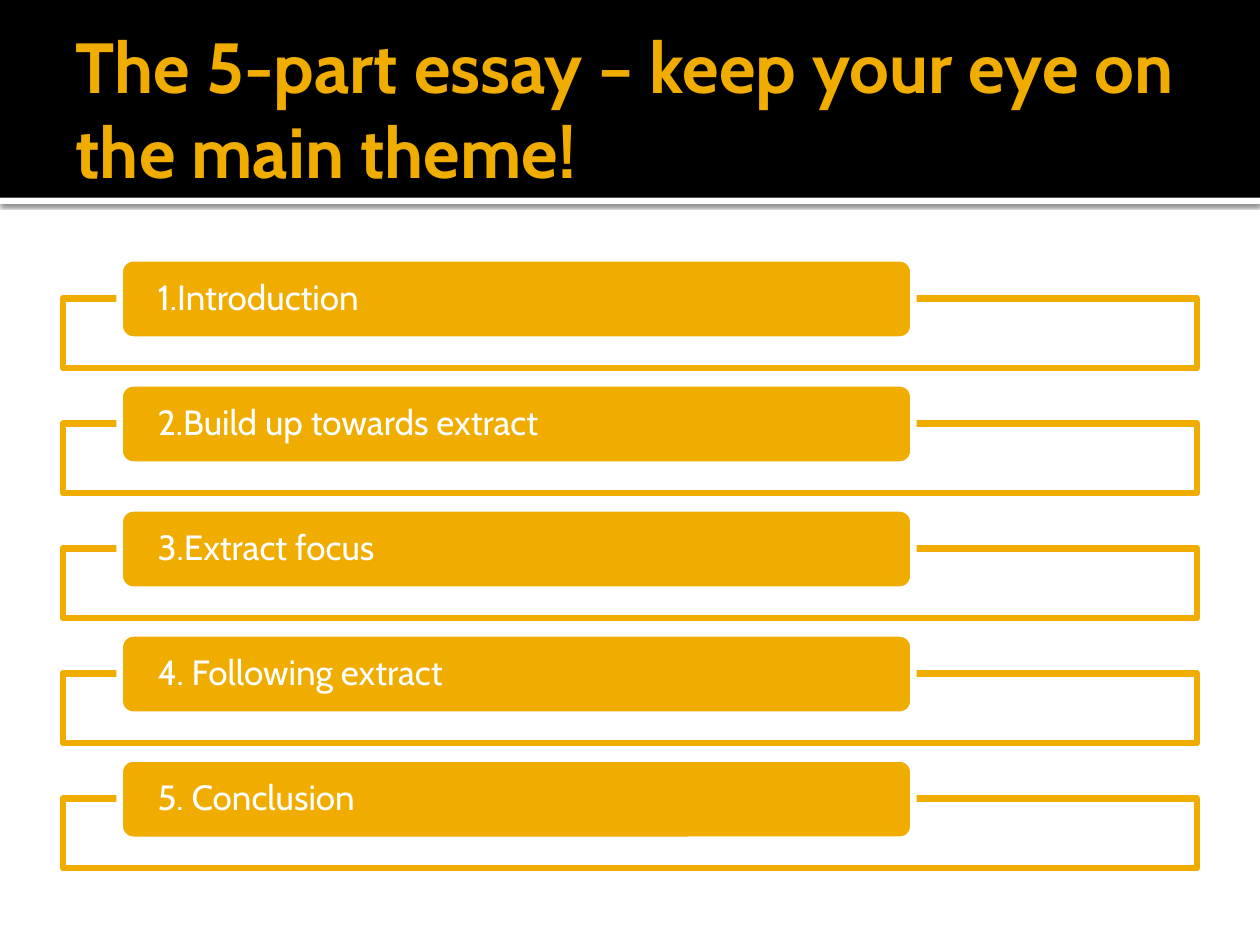
from dataclasses import dataclass

from lxml import etree
from pptx import Presentation
from pptx.dml.color import RGBColor
from pptx.enum import shapes, text
from pptx.oxml import ns
from pptx.util import Pt

BLACK = RGBColor(0x00, 0x00, 0x00)
WHITE = RGBColor(0xFF, 0xFF, 0xFF)
GOLD = RGBColor(0xF0, 0xAD, 0x00)
FONT = "Cabin"
LINE_WIDTH = 3.78


@dataclass(frozen=True)
class Box:
    left: float
    top: float
    width: float
    height: float

    def lengths(self):
        return Pt(self.left), Pt(self.top), Pt(self.width), Pt(self.height)


SECTIONS = [
    "1.Introduction",
    "2.Build up towards extract",
    "3.Extract focus",
    "4. Following extract",
    "5. Conclusion",
]
FIRST_TOP = 147.6
PITCH = 71.46
FRAME_DROP = 22.9


def add_box(slide, kind, box: Box, fill: RGBColor, line: RGBColor | None = None):
    sp = slide.shapes.add_shape(kind, *box.lengths())
    sp.shadow.inherit = False
    sp.fill.solid()
    sp.fill.fore_color.rgb = fill
    if line is None:
        sp.line.fill.background()
    else:
        sp.line.color.rgb = line
        sp.line.width = Pt(LINE_WIDTH)
    return sp


def set_alpha(parent, percent: int) -> None:
    color = parent.find(".//" + ns.qn("a:srgbClr"))
    etree.SubElement(color, ns.qn("a:alpha"), val=str(percent * 1000))


def add_drop_shadow(sp) -> None:
    effects = sp._element.spPr.find(ns.qn("a:effectLst"))
    shadow = etree.SubElement(
        effects, ns.qn("a:outerShdw"), blurRad=str(Pt(2.5)), dist=str(Pt(0.8)),
        dir="5400000", algn="tl", rotWithShape="0")
    etree.SubElement(shadow, ns.qn("a:srgbClr"), val=str(BLACK))
    set_alpha(shadow, 60)


def add_section(slide, top: float, label: str) -> None:
    frame = add_box(slide, shapes.MSO_SHAPE.RECTANGLE,
                    Box(36, top + FRAME_DROP, 648, 39.7), WHITE, GOLD)
    set_alpha(frame._element.spPr.find(ns.qn("a:solidFill")), 90)

    tab = add_box(slide, shapes.MSO_SHAPE.ROUNDED_RECTANGLE,
                  Box(68.4, top, 453.6, 46.5), GOLD, WHITE)
    tf = tab.text_frame
    tf.word_wrap = True
    tf.vertical_anchor = text.MSO_ANCHOR.MIDDLE
    tf.margin_left = tf.margin_right = Pt(19.4)
    tf.margin_top = tf.margin_bottom = 0
    p = tf.paragraphs[0]
    p.text = label
    p.alignment = text.PP_ALIGN.LEFT
    p.line_spacing = 0.9
    p.font.name, p.font.size = FONT, Pt(20)
    p.font.color.rgb = WHITE


def add_title(slide, wording: str) -> None:
    title = slide.shapes.title
    title.left, title.top, title.width, title.height = Box(36, 12.2, 648, 98.6).lengths()
    tf = title.text_frame
    tf.word_wrap = True
    tf.auto_size = text.MSO_AUTO_SIZE.NONE
    tf.vertical_anchor = text.MSO_ANCHOR.MIDDLE
    tf.margin_left = Pt(7.2)
    tf.margin_right = tf.margin_top = tf.margin_bottom = Pt(3.6)
    p = tf.paragraphs[0]
    p.text = wording
    p.alignment = text.PP_ALIGN.LEFT
    p.font.name, p.font.size, p.font.bold = FONT, Pt(40.5), True
    p.font.color.rgb = GOLD
    # Bring the title in front of the header band
    slide.shapes._spTree.append(title._element)


def main() -> None:
    prs = Presentation()
    prs.slide_width, prs.slide_height = Pt(720), Pt(540)
    slide = prs.slides.add_slide(prs.slide_layouts[5])

    # Header: white strip with shadow, black band, title
    strip = add_box(slide, shapes.MSO_SHAPE.RECTANGLE, Box(0, 113, 720, 3.6), WHITE)
    add_drop_shadow(strip)
    add_box(slide, shapes.MSO_SHAPE.RECTANGLE, Box(0, 0, 720, 113), BLACK)
    add_title(slide, "The 5-part essay – keep your eye on the main theme!")

    # Essay sections
    for i, label in enumerate(SECTIONS):
        add_section(slide, FIRST_TOP + i * PITCH, label)

    prs.save("out.pptx")


if __name__ == "__main__":
    main()
